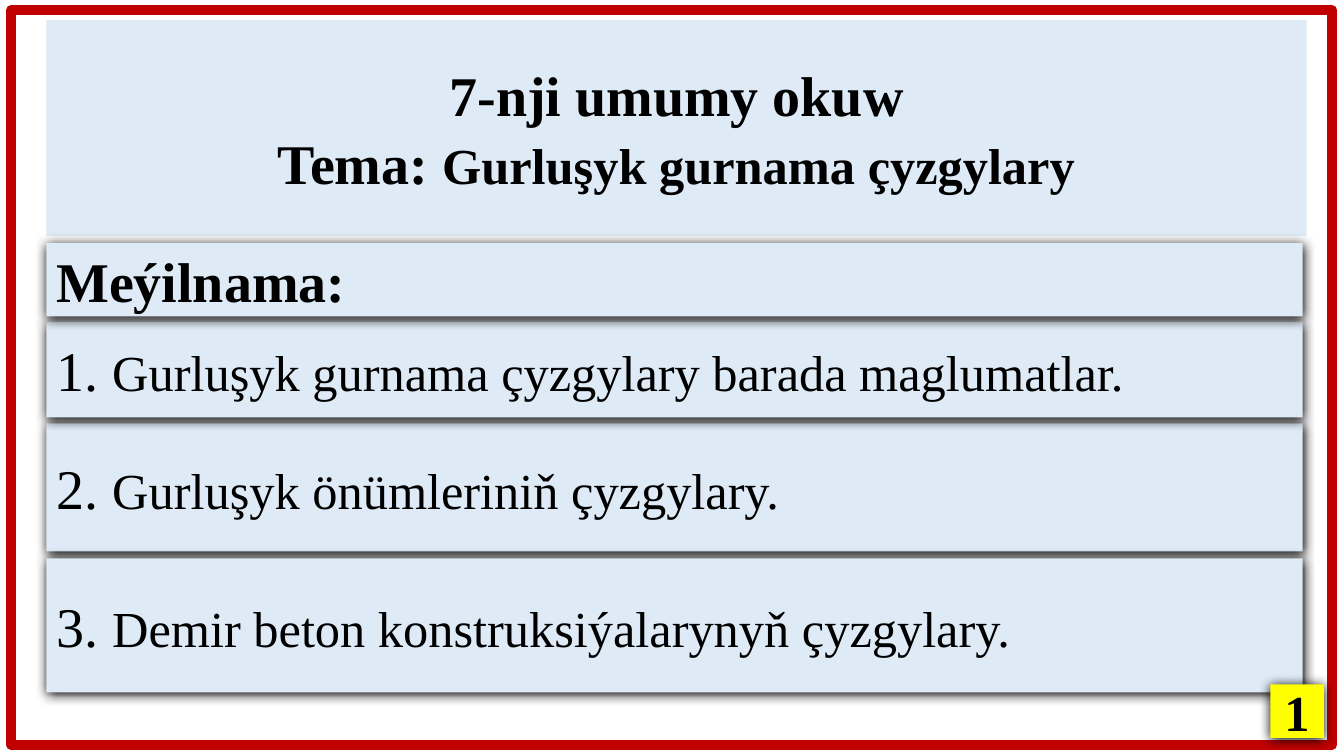
from dataclasses import dataclass

from lxml.etree import SubElement
from pptx import Presentation
from pptx.dml.color import RGBColor
from pptx.enum.shapes import MSO_SHAPE
from pptx.enum.text import MSO_ANCHOR, MSO_AUTO_SIZE, PP_ALIGN
from pptx.oxml.ns import qn
from pptx.shapes.autoshape import Shape
from pptx.slide import Slide
from pptx.util import Inches, Pt


@dataclass(frozen=True)
class Theme:
    font: str = "Times New Roman"
    text: RGBColor = RGBColor(0, 0, 0)
    panel: RGBColor = RGBColor(0xDE, 0xEB, 0xF7)
    border: RGBColor = RGBColor(0xC0, 0, 0)
    badge: RGBColor = RGBColor(0xFF, 0xFF, 0)
    shadow: str = "000000"
    large: int = 40
    medium: int = 36


@dataclass(frozen=True)
class Span:
    text: str
    size: int


@dataclass(frozen=True)
class Frame:
    left: float
    top: float
    width: float
    height: float


@dataclass(frozen=True)
class Panel:
    frame: Frame
    spans: tuple[Span, ...]
    fill: RGBColor
    bold: bool = False
    align: PP_ALIGN = PP_ALIGN.LEFT


THEME = Theme()
PANEL_LEFT, PANEL_WIDTH = 0.46, 12.46


def agenda_panel(top: float, height: float, *spans: Span, bold: bool = False) -> Panel:
    return Panel(Frame(PANEL_LEFT, top, PANEL_WIDTH, height), spans, THEME.panel, bold)


def agenda_item(number: int, top: float, height: float, text: str) -> Panel:
    return agenda_panel(top, height, Span(f"{number}. ", THEME.large), Span(text, THEME.medium))


TITLE_FRAME = Frame(PANEL_LEFT, 0.2, 12.5, 2.14)
TITLE_LINES = (
    (Span("7-nji umumy okuw", THEME.large),),
    (Span("Tema: ", THEME.large), Span("Gurluşyk gurnama çyzgylary", THEME.medium)),
)
AGENDA = (
    agenda_item(2, 4.2, 1.27, "Gurluşyk önümleriniň çyzgylary."),
    agenda_item(1, 3.19, 0.95, "Gurluşyk gurnama çyzgylary barada maglumatlar."),
    agenda_panel(2.41, 0.73, Span("Meýilnama:", THEME.large), bold=True),
    agenda_item(3, 5.54, 1.33, "Demir beton konstruksiýalarynyň çyzgylary."),
)
BORDER_FRAME = Frame(0.11, 0.1, 13.1, 7.29)
PAGE_BADGE = Panel(
    Frame(12.6, 6.79, 0.53, 0.53),
    (Span("1", THEME.medium),),
    THEME.badge,
    bold=True,
    align=PP_ALIGN.CENTER,
)


def write_lines(
    box: Shape, lines: tuple[tuple[Span, ...], ...], bold: bool, align: PP_ALIGN
) -> None:
    frame = box.text_frame
    frame.word_wrap = True
    frame.auto_size = MSO_AUTO_SIZE.NONE
    frame.vertical_anchor = MSO_ANCHOR.MIDDLE
    for index, spans in enumerate(lines):
        para = frame.add_paragraph() if index else frame.paragraphs[0]
        para.alignment = align
        for span in spans:
            run = para.add_run()
            run.text = span.text
            run.font.name = THEME.font
            run.font.size = Pt(span.size)
            run.font.bold = bold
            run.font.color.rgb = THEME.text


def add_rectangle(page: Slide, frame: Frame) -> Shape:
    box = page.shapes.add_shape(
        MSO_SHAPE.RECTANGLE,
        Inches(frame.left),
        Inches(frame.top),
        Inches(frame.width),
        Inches(frame.height),
    )
    box.shadow.inherit = False
    return box


def add_shadow(box: Shape) -> None:
    effects = box.element.spPr.find(qn("a:effectLst"))
    shadow = SubElement(
        effects,
        qn("a:outerShdw"),
        blurRad=str(Pt(8.5)),
        dist=str(Pt(1)),
        dir="5400000",
        algn="ctr",
        rotWithShape="0",
    )
    SubElement(shadow, qn("a:srgbClr"), val=THEME.shadow)


def add_panel(page: Slide, panel: Panel) -> None:
    box = add_rectangle(page, panel.frame)
    box.fill.solid()
    box.fill.fore_color.rgb = panel.fill
    box.line.fill.background()
    add_shadow(box)
    write_lines(box, (panel.spans,), panel.bold, panel.align)


def fill_title(page: Slide) -> None:
    title = page.shapes.title
    title.left, title.top = Inches(TITLE_FRAME.left), Inches(TITLE_FRAME.top)
    title.width, title.height = Inches(TITLE_FRAME.width), Inches(TITLE_FRAME.height)
    title.fill.solid()
    title.fill.fore_color.rgb = THEME.panel
    write_lines(title, TITLE_LINES, True, PP_ALIGN.CENTER)


def add_border(page: Slide) -> None:
    border = add_rectangle(page, BORDER_FRAME)
    border.fill.background()
    border.line.color.rgb = THEME.border
    border.line.width = Pt(7)
    SubElement(border.element.spPr.find(qn("a:ln")), qn("a:round"))


def main() -> None:
    deck = Presentation()
    deck.slide_width, deck.slide_height = Inches(13.33), Inches(7.5)
    page = deck.slides.add_slide(deck.slide_layouts.get_by_name("Title Only"))
    fill_title(page)
    for panel in AGENDA:
        add_panel(page, panel)
    add_border(page)
    add_panel(page, PAGE_BADGE)
    deck.save("out.pptx")


if __name__ == "__main__":
    main()
